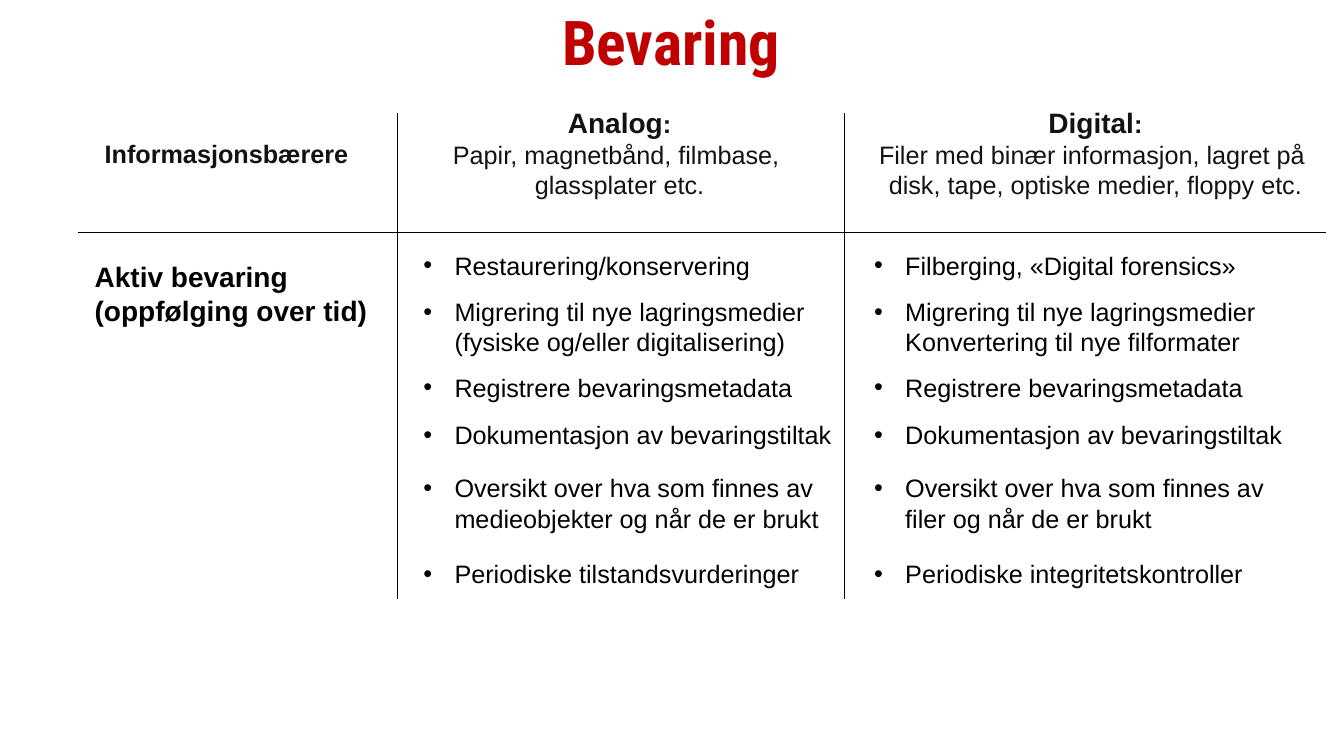
from lxml import etree
from pptx import Presentation, util as u
from pptx.dml.color import RGBColor
from pptx.enum import shapes, text
from pptx.oxml.ns import qn

INK = {"red": "C00000", "dark": "111217", "black": "000000"}
LEFT, MID = text.PP_ALIGN.LEFT, text.PP_ALIGN.CENTER
TOPS = [2.43, 2.89, 3.64, 4.11, 4.64, 5.49]

HEADS = [
    ((4.35, 1, 3.59, 1.04), "Analog",
     ["Papir, magnetbånd, filmbase, ", "glassplater etc."]),
    ((8.58, 1, 4.57, 1.04), "Digital",
     ["Filer med binær informasjon, lagret på ",
      "disk, tape, optiske medier, floppy etc."]),
]
LISTS = [
    (4.1, [
        "Restaurering/konservering",
        "Migrering til nye lagringsmedier (fysiske og/eller digitalisering)",
        "Registrere bevaringsmetadata",
        "Dokumentasjon av bevaringstiltak",
        "Oversikt over hva som finnes av medieobjekter og når de er brukt",
        "Periodiske tilstandsvurderinger",
    ]),
    (8.57, [
        "Filberging, «Digital forensics»",
        "Migrering til nye lagringsmedier Konvertering til nye filformater",
        "Registrere bevaringsmetadata",
        "Dokumentasjon av bevaringstiltak",
        "Oversikt over hva som finnes av filer og når de er brukt",
        "Periodiske integritetskontroller",
    ]),
]
RULES = [(3.94, 1.12, 3.94, 5.94), (8.37, 1.12, 8.37, 5.94),
         (0.77, 2.31, 13.15, 2.31)]


def frame(slide, box):
    body = slide.shapes.add_textbox(*map(u.Inches, box)).text_frame
    body.word_wrap = True
    return body


def write(para, words, size=18, bold=False, color="black", font="Arial",
          align=LEFT):
    para.alignment = align
    run = para.add_run()
    run.text = words
    run.font.size = u.Pt(size)
    run.font.bold = bold
    run.font.name = font
    run.font.color.rgb = RGBColor.from_string(INK[color])


def title(slide, box):
    body = frame(slide, box)
    body.margin_left = 0
    body.vertical_anchor = text.MSO_ANCHOR.BOTTOM
    para = body.paragraphs[0]
    para.line_spacing = 0.9
    write(para, "Bevaring", size=44.1, bold=True, color="red",
          font="Roboto Condensed", align=MID)


def label(slide, box, words, **form):
    write(frame(slide, box).paragraphs[0], words, bold=True, **form)


def header(slide, box, name, lines):
    body = frame(slide, box)
    first = body.paragraphs[0]
    write(first, name, size=20, bold=True, color="dark", align=MID)
    write(first, ":", bold=True, color="dark", align=MID)
    for line in lines:
        write(body.add_paragraph(), line, color="dark", align=MID)


def bullet(para):
    props = para._p.get_or_add_pPr()
    props.set("marL", str(u.Inches(0.31)))
    props.set("indent", str(-u.Inches(0.31)))
    etree.SubElement(props, qn("a:buFont")).set("typeface", "Arial")
    etree.SubElement(props, qn("a:buChar")).set("char", "•")


def column(slide, left, items):
    for top, item in zip(TOPS, items):
        para = frame(slide, (left, top, 4.31, 0.4)).paragraphs[0]
        bullet(para)
        write(para, item)


def rule(slide, ends):
    line = slide.shapes.add_connector(
        shapes.MSO_CONNECTOR.STRAIGHT, *map(u.Inches, ends))
    line.line.width = u.Pt(0.5)
    line.line.color.rgb = RGBColor.from_string(INK["black"])
    etree.SubElement(line._element.spPr, qn("a:effectLst"))


def main():
    deck = Presentation()
    deck.slide_width, deck.slide_height = u.Inches(13.33), u.Inches(7.5)
    slide = deck.slides.add_slide(deck.slide_layouts[6])
    title(slide, (0.69, 0.13, 12.03, 0.7))
    label(slide, (0.94, 1.32, 2.76, 0.4), "Informasjonsbærere", color="dark")
    for box, name, lines in HEADS:
        header(slide, box, name, lines)
    for ends in RULES:
        rule(slide, ends)
    for left, items in LISTS:
        column(slide, left, items)
    label(slide, (0.84, 2.53, 2.95, 0.77),
          "Aktiv bevaring (oppfølging over tid)", size=20)
    deck.save("out.pptx")


if __name__ == "__main__":
    main()
